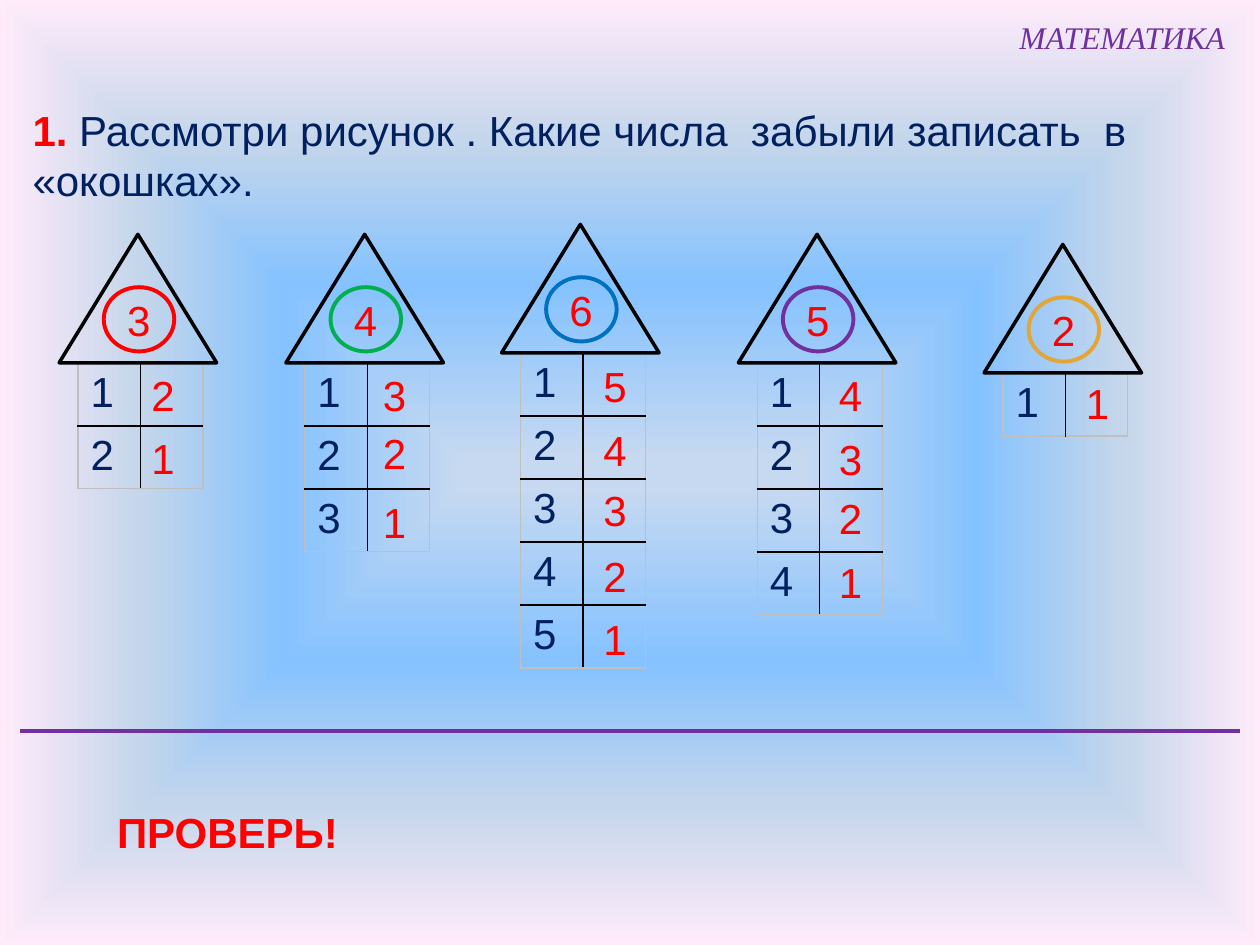
from lxml import etree
from pptx import Presentation
from pptx.dml.color import RGBColor
from pptx.enum.shapes import MSO_CONNECTOR as CONNECTOR, MSO_SHAPE as SHAPE
from pptx.enum.text import MSO_ANCHOR as ANCHOR, PP_ALIGN as ALIGN
from pptx.oxml import parse_xml
from pptx.oxml.ns import qn
from pptx.util import Pt

RED = RGBColor(0xFF, 0x00, 0x00)
NAVY = RGBColor(0x00, 0x20, 0x60)
PURPLE = RGBColor(0x70, 0x30, 0xA0)
GREEN = RGBColor(0x00, 0xB0, 0x50)
BLUE = RGBColor(0x00, 0x70, 0xC0)
GOLD = RGBColor(0xE2, 0xA5, 0x38)
BLACK = RGBColor(0x00, 0x00, 0x00)
GREY = RGBColor(0xBF, 0xBF, 0xBF)
BACKDROP = [
    (3, RGBColor(0xC6, 0xD9, 0xF1)),
    (40, RGBColor(0x85, 0xC2, 0xFF)),
    (70, RGBColor(0xC4, 0xD6, 0xEB)),
    (100, RGBColor(0xFF, 0xEB, 0xFA)),
]
DRAWING_NS = "http://schemas.openxmlformats.org/drawingml/2006/main"

ROOF_WIDTH, ROOF_HEIGHT = 90, 73.4
COLUMN_WIDTH = 35.7
HOUSES = [
    (3, RED, 33.8, 133.9, 34, 45.7, [207.4, 243.4]),
    (4, GREEN, 163.4, 133.9, 34, 48.3, [207.4, 240.5, 280.1]),
    (6, BLUE, 286.6, 128.2, 36, 51.1, [202.3, 239, 273.6, 311, 347]),
    (5, PURPLE, 421.9, 133.9, 34, 50.4, [207.4, 244.1, 277.9, 314.6]),
    (2, GOLD, 562.3, 139.7, 34, 51.1, [212.4]),
]


def add_text(left, top, width, height, text, color=RED, bold=False, wrap=True):
    box = slide.shapes.add_textbox(Pt(left), Pt(top), Pt(width), Pt(height))
    box.text_frame.word_wrap = wrap
    box.text_frame.text = text
    font = box.text_frame.paragraphs[0].runs[0].font
    font.name, font.size, font.bold = "Arial", Pt(24), bold
    font.color.rgb = color
    return box.text_frame.paragraphs[0]


def add_outline(kind, left, top, width, height, color, weight):
    outline = slide.shapes.add_shape(kind, Pt(left), Pt(top), Pt(width), Pt(height))
    outline.shadow.inherit = False
    outline.fill.background()
    outline.line.color.rgb = color
    outline.line.width = Pt(weight)


prs = Presentation()
prs.slide_width, prs.slide_height = Pt(720), Pt(540)
slide = prs.slides.add_slide(prs.slide_layouts[5])

slide.background.fill.solid()
solid_fill = slide.background._cSld.find(".//" + qn("a:solidFill"))
stops = "".join(
    f'<a:gs pos="{position * 1000}"><a:srgbClr val="{color}"/></a:gs>'
    for position, color in BACKDROP
)
solid_fill.getparent().replace(solid_fill, parse_xml(
    f'<a:gradFill xmlns:a="{DRAWING_NS}" rotWithShape="1"><a:gsLst>{stops}</a:gsLst>'
    '<a:path path="shape"><a:fillToRect l="50000" t="50000" r="50000" b="50000"/></a:path>'
    '</a:gradFill>'))

subject = slide.shapes.title
subject.left, subject.top, subject.width, subject.height = Pt(575.3), Pt(6.5), Pt(133.2), Pt(29)
subject.text_frame.text = "МАТЕМАТИКА"
subject.text_frame.word_wrap = False
subject.text_frame.vertical_anchor = ANCHOR.TOP
subject.text_frame.paragraphs[0].alignment = ALIGN.LEFT
subject_font = subject.text_frame.paragraphs[0].runs[0].font
subject_font.name, subject_font.size, subject_font.italic = "Times New Roman", Pt(18), True
subject_font.color.rgb = PURPLE

question = add_text(11.5, 56.2, 685.4, 65.5, "1. ", bold=True)
wording = question.add_run()
wording.text = "Рассмотри рисунок . Какие числа  забыли записать  в «окошках»."
wording.font.name, wording.font.size, wording.font.bold = "Arial", Pt(24), False
wording.font.color.rgb = NAVY

for total, color, left, top, row_height, answer_offset, answer_tops in HOUSES:
    floors = total - 1
    windows = slide.shapes.add_table(
        floors, 2, Pt(left + 10.8), Pt(top + ROOF_HEIGHT),
        Pt(2 * COLUMN_WIDTH), Pt(floors * row_height)).table
    windows.first_row = windows.horz_banding = False
    for column in windows.columns:
        column.width = Pt(COLUMN_WIDTH)
    for row in range(floors):
        windows.rows[row].height = Pt(row_height)
        for side in range(2):
            cell = windows.cell(row, side)
            if side == 0:
                cell.text_frame.text = str(row + 1)
            paragraph = cell.text_frame.paragraphs[0]
            paragraph.font.size = Pt(24)
            for run in paragraph.runs:
                run.font.name, run.font.size = "Arial", Pt(24)
                run.font.color.rgb = NAVY
            properties = cell._tc.get_or_add_tcPr()
            outer_edges = {"lnL": side == 0, "lnR": side == 1,
                           "lnT": row == 0, "lnB": row == floors - 1}
            for edge, is_outer in outer_edges.items():
                border = etree.SubElement(
                    properties, qn(f"a:{edge}"), w=str(Pt(0.75 if is_outer else 1)))
                border_fill = etree.SubElement(border, qn("a:solidFill"))
                etree.SubElement(border_fill, qn("a:srgbClr"),
                                 val=str(GREY if is_outer else BLACK))
            cell.fill.background()

    add_outline(SHAPE.ISOSCELES_TRIANGLE, left, top, ROOF_WIDTH, ROOF_HEIGHT, BLACK, 2)
    add_text(left + 31.7, top + 31, 39.6, 36, str(total))
    add_outline(SHAPE.OVAL, left + 25.5, top + 30.2, 40.3, 36.7, color, 2.25)
    for row, answer_top in enumerate(answer_tops):
        add_text(left + answer_offset, answer_top, 28, 36, str(floors - row), wrap=False)

add_text(59.8, 457.2, 148.3, 36, "ПРОВЕРЬ!", bold=True)

divider = slide.shapes.add_connector(CONNECTOR.STRAIGHT, Pt(11.5), Pt(417.6), Pt(708.5), Pt(417.6))
divider.line.color.rgb = PURPLE
divider.line.width = Pt(2.25)
etree.SubElement(divider._element.spPr, qn("a:effectLst"))

prs.save("out.pptx")
